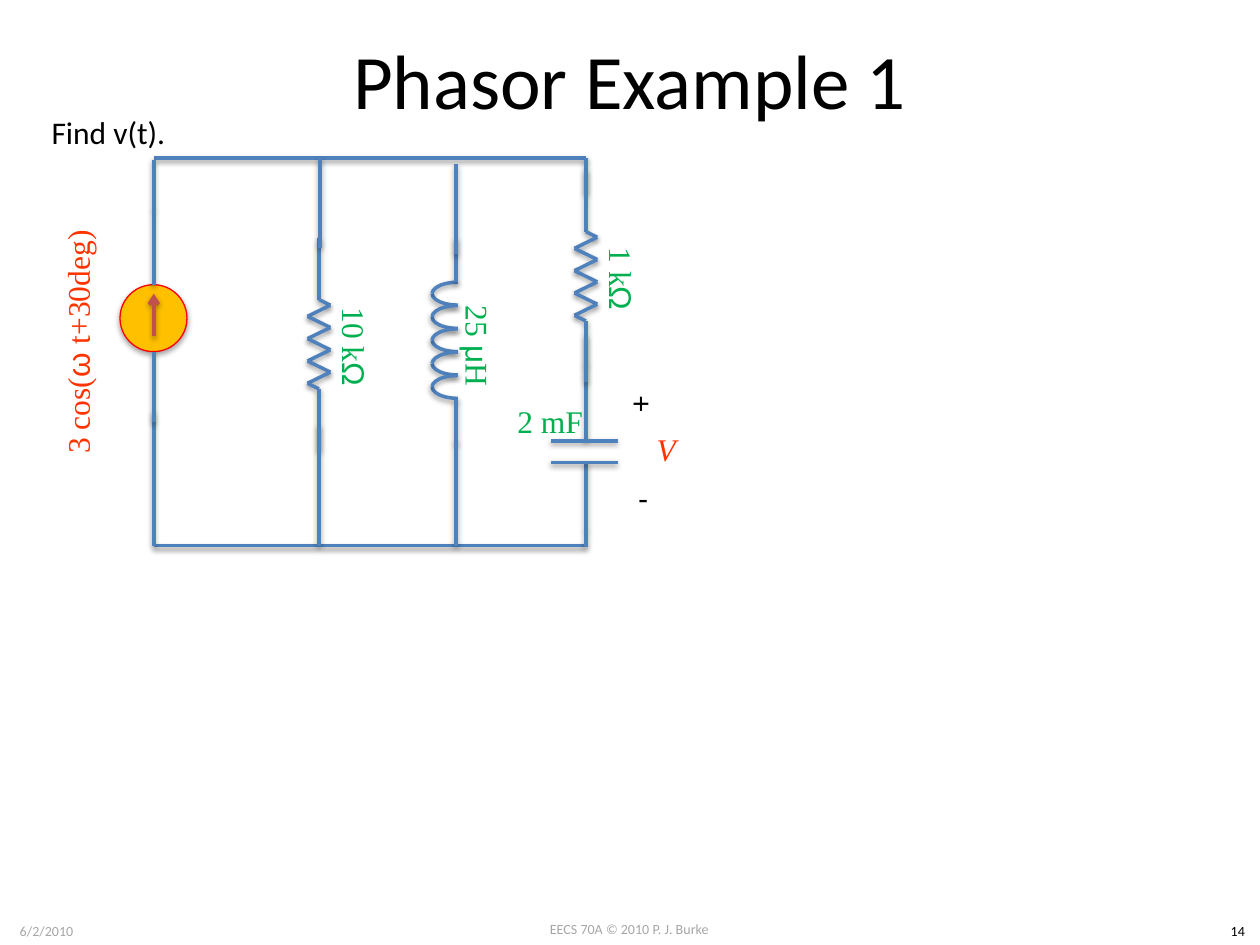
"""Build the slide with the phasor circuit example."""
from pptx import Presentation as Deck
from pptx.dml.color import RGBColor as Color
from pptx.enum.shapes import MSO_CONNECTOR as Link, MSO_SHAPE as Form
from pptx.enum.text import MSO_ANCHOR as Anchor, PP_ALIGN as Align
from pptx.oxml import parse_xml as to_xml
from pptx.oxml.ns import nsdecls as spaces
from pptx.util import Cm, Pt

BLUE = Color(0x4F, 0x81, 0xBD)
BRICK = Color(0xC0, 0x50, 0x4D)
GOLD = Color(0xFF, 0xC0, 0x00)
RED = Color(0xFF, 0x00, 0x00)
ORANGE = Color(0xFF, 0x33, 0x00)
GREEN = Color(0x00, 0xB0, 0x50)
GREY = Color(0xA6, 0xA6, 0xA6)
BLACK = Color(0x00, 0x00, 0x00)
SANS, SERIF, GREEK = "Calibri", "Times New Roman", "Arial"
SOURCE, LOAD, COIL, RIGHT = 3.1, 6.43, 9.19, 11.81
TOP, BASE = 3.18, 11.0


def shade(shape, alpha=38, drop=1.6):
    shape.element.spPr.append(to_xml(
        f'<a:effectLst {spaces("a")}><a:outerShdw blurRad="{Pt(3.1)}" '
        f'dist="{Pt(drop)}" dir="5400000" rotWithShape="0"><a:srgbClr val="000000">'
        f'<a:alpha val="{alpha * 1000}"/></a:srgbClr></a:outerShdw></a:effectLst>'))


def wire(slide, x1, y1, x2, y2, color=BLUE, arrow=False):
    line = slide.shapes.add_connector(
        Link.STRAIGHT, Cm(x1), Cm(y1), Cm(x2), Cm(y2))
    line.line.color.rgb = color
    line.line.width = Pt(2)
    if arrow:
        line.line._get_or_add_ln().append(
            to_xml(f'<a:tailEnd {spaces("a")} type="arrow"/>'))
    shade(line)


def text(slide, box, *runs, size=18, color=BLACK, font=SANS, align=Align.CENTER,
         anchor=Anchor.MIDDLE, turn=0, wrap=True, slant=False):
    shape = slide.shapes.add_textbox(*map(Cm, box))
    shape.rotation = turn
    frame = shape.text_frame
    frame.word_wrap = wrap
    frame.vertical_anchor = anchor
    para = frame.paragraphs[0]
    para.alignment = align
    for words, face in (r if isinstance(r, tuple) else (r, font) for r in runs):
        run = para.add_run()
        run.text = words
        run.font.name = face
        run.font.size = Pt(size)
        run.font.color.rgb = color
        run.font.italic = slant


def label(slide, x, y, *runs, turn=90):
    text(slide, (x, y, 3.02, 1.85), *runs, color=GREEN, font=SERIF, turn=turn)


def resist(slide, x, y, value):
    lead, span, teeth = 1.24, 1.8, 8
    start, end = y + lead, y + lead + span
    label(slide, x - 0.79, y + 1.27, value, ("Ω", GREEK))
    bends = [(x - 0.23 * (-1) ** k, start + span / teeth * (k - 0.5))
             for k in range(1, teeth + 1)]
    nodes = [(x, y), (x, start), *bends, (x, end), (x, end + lead)]
    for here, there in zip(nodes, nodes[1:]):
        wire(slide, *here, *there)


def coil(slide, x):
    for turn in range(5):
        for flip in (False, True):
            arc = slide.shapes.add_shape(
                Form.ARC, Cm(x - 0.48), Cm(5.69 + 0.47 * turn), Cm(1.04), Cm(0.46))
            arc.rotation = 180
            if flip:
                arc.element.spPr.xfrm.set("flipV", "1")
            arc.fill.background()
            arc.line.color.rgb = BLUE
            arc.line.width = Pt(2)
            shade(arc)
    for start, end in ((4.8, 5.69), (8.05, 8.94), (8.89, BASE), (5.13, 3.3)):
        wire(slide, x, start, x, end)
    label(slide, 8.13, 6.05, "25 ", ("μ", GREEK), "H")


def cap(slide, x):
    for start, end in ((6.76, 7.32), (7.32, 8.89), (9.32, 10.67), (10.67, 11.02)):
        wire(slide, x, start, x, end)
    for y in (8.89, 9.32):
        wire(slide, 12.45, y, 11.1, y)
    label(slide, 9.58, 7.57, "2 mF", turn=0)
    plain = dict(align=Align.LEFT, anchor=Anchor.TOP, wrap=False)
    text(slide, (12.55, 7.65, 0.84, 1.02), "+", turn=90, **plain)
    text(slide, (12.62, 9.53, 0.71, 1.02), "-", **plain)
    text(slide, (12.45, 8.28, 1.96, 1.55), "V", color=ORANGE, font=SERIF, slant=True)


def source(slide, x):
    ring = slide.shapes.add_shape(Form.OVAL, Cm(x - 0.68), Cm(5.74), Cm(1.35), Cm(1.35))
    ring.fill.solid()
    ring.fill.fore_color.rgb = GOLD
    ring.line.color.rgb = RED
    ring.line.width = Pt(0.75)
    shade(ring, alpha=35, drop=1.8)
    wire(slide, x, 6.78, x, 5.92, color=BRICK, arrow=True)
    for start, end in ((4.22, 3.23), (BASE, 8.28), (5.74, 4.22), (7.09, 8.51)):
        wire(slide, x, start, x, end)
    text(slide, (-1.12, 6.12, 5.36, 1.55), "3 cos(", ("ω ", GREEK), "t+30deg)",
         color=ORANGE, font=SERIF, turn=270)


def frame(slide):
    wire(slide, SOURCE, BASE, RIGHT, BASE)
    wire(slide, RIGHT, TOP, SOURCE, TOP)
    wire(slide, RIGHT, TOP, RIGHT, 3.91)
    wire(slide, 6.45, 5, 6.45, TOP)
    wire(slide, LOAD, 8.56, LOAD, BASE)


def words(slide):
    foot = dict(size=8, anchor=Anchor.TOP)
    text(slide, (9.73, 18.44, 5.92, 0.61), "EECS 70A © 2010 P. J. Burke",
         color=GREY, **foot)
    text(slide, (0, 18.47, 1.88, 0.61), "6/2/2010", color=GREY, **foot)
    text(slide, (24.51, 18.47, 0.89, 0.61), "14", **foot)
    text(slide, (1.27, 0, 22.86, 3.18), "Phasor Example 1", size=44)
    text(slide, (0.79, 2.16, 4.29, 1.02), "Find v(t).",
         align=Align.LEFT, anchor=Anchor.TOP)


def main():
    deck = Deck()
    deck.slide_width, deck.slide_height = Cm(25.4), Cm(19.05)
    slide = deck.slides.add_slide(deck.slide_layouts[6])
    words(slide)
    resist(slide, LOAD, 4.8, "10 k")
    frame(slide)
    cap(slide, RIGHT)
    resist(slide, RIGHT, 3.43, "1 k")
    source(slide, SOURCE)
    coil(slide, COIL)
    deck.save("out.pptx")


if __name__ == "__main__":
    main()
